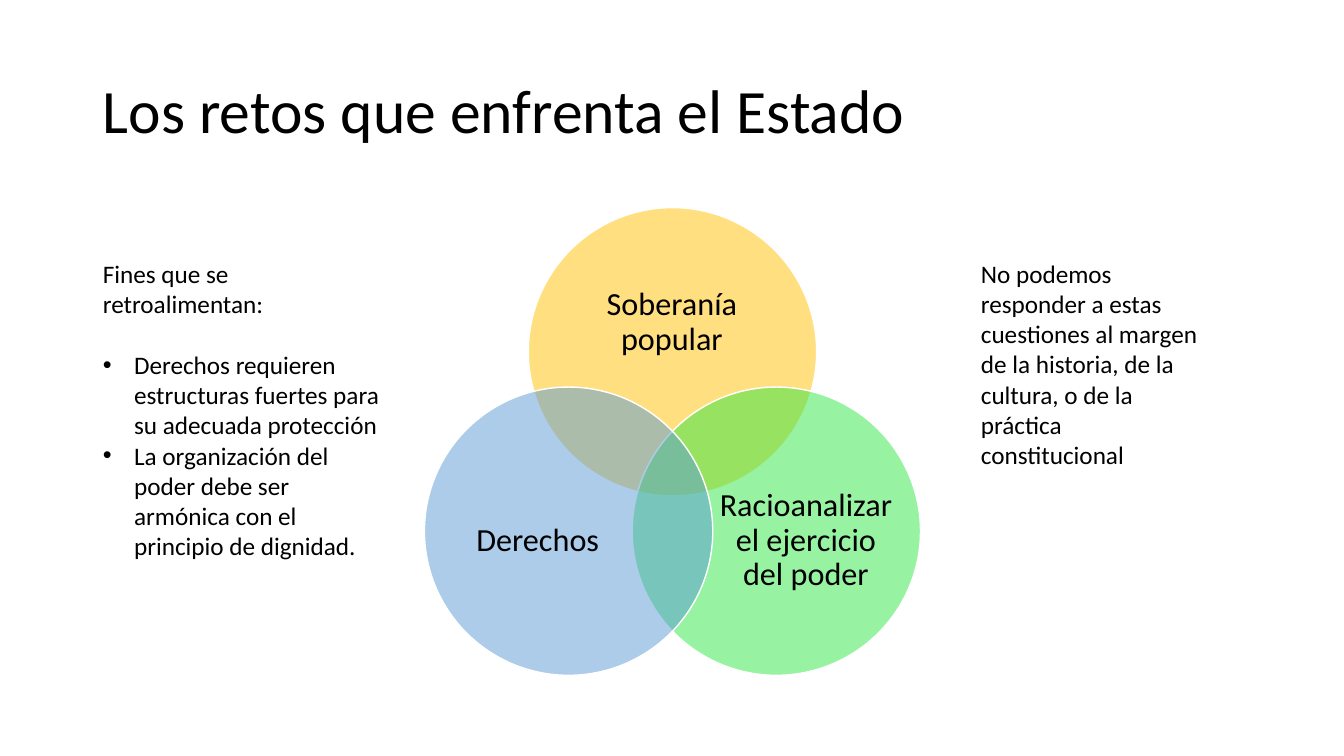
from dataclasses import dataclass
from math import cos, radians, sin

from lxml.etree import SubElement
from pptx import Presentation
from pptx.dml.color import RGBColor as Rgb
from pptx.enum.shapes import MSO_SHAPE as Kind
from pptx.enum.text import MSO_ANCHOR as Anchor, MSO_AUTO_SIZE as Fit, PP_ALIGN as Align
from pptx.oxml.ns import qn
from pptx.util import Pt

PX = 9144  # EMU in one px, at 100 px to the inch
FONT = "Calibri"
INK = {"text": "000000", "edge": "FFFFFF", "gold": "FFC000", "green": "30E845", "blue": "5B9BD5"}


@dataclass
class Box:
    left: int
    top: int
    width: int
    height: int

    def emu(self) -> tuple[int, ...]:
        return tuple(n * PX for n in (self.left, self.top, self.width, self.height))


@dataclass
class Ring:
    label: str
    hue: str
    angle: int
    box: Box


@dataclass
class Line:
    text: str
    bullet: bool = False
    before: int = 0


# Venn layout: circle centres sit evenly around one middle point
MID = (667, 468)
REACH = 119
RADIUS = 143
RINGS = [
    Ring("Soberanía popular", "gold", -90, Box(562, 256, 209, 128)),
    Ring("Racioanalizar el ejercicio del poder", "green", 30, Box(711, 458, 177, 157)),
    Ring("Derechos", "blue", 150, Box(448, 458, 171, 157)),
]
AIMS = [
    Line("Fines que se retroalimentan:"),
    Line("Derechos requieren estructuras fuertes para su adecuada protección", True, 22),
    Line("La organización del poder debe ser armónica con el principio de dignidad.", True),
]
NOTE = [
    Line("No podemos responder a estas cuestiones al margen de la historia, "
         "de la cultura, o de la práctica constitucional"),
]


def color(name: str) -> Rgb:
    return Rgb.from_string(INK[name])


def write(shape, lines: list[Line], *, size: int = 18, align=Align.LEFT,
          anchor=Anchor.TOP, space: float = 1.0, inset: bool = True) -> None:
    frame = shape.text_frame
    frame.word_wrap = True
    frame.auto_size = Fit.NONE
    frame.vertical_anchor = anchor
    if not inset:
        frame.margin_left = frame.margin_right = frame.margin_top = frame.margin_bottom = 0
    for i, line in enumerate(lines):
        para = frame.add_paragraph() if i else frame.paragraphs[0]
        mark(para, line.bullet)
        para.alignment = align
        para.line_spacing = space
        para.space_before = Pt(line.before)
        para.space_after = Pt(0)
        run = para.add_run()
        run.text = line.text
        run.font.name = FONT
        run.font.size = Pt(size)
        run.font.color.rgb = color("text")


def mark(para, bullet: bool) -> None:
    props = para._p.get_or_add_pPr()
    hang = 31 * PX if bullet else 0
    props.set("marL", str(hang))
    props.set("indent", str(-hang))
    if bullet:
        SubElement(props, qn("a:buFont"), typeface="Arial")
        SubElement(props, qn("a:buChar"), char="•")
    else:
        SubElement(props, qn("a:buNone"))


def place(shape, box: Box) -> None:
    shape.left, shape.top, shape.width, shape.height = box.emu()


def draw(shapes, ring: Ring) -> None:
    turn = radians(ring.angle)
    left = round(MID[0] + REACH * cos(turn) - RADIUS)
    top = round(MID[1] + REACH * sin(turn) - RADIUS)
    disc = shapes.add_shape(Kind.OVAL, *Box(left, top, 2 * RADIUS, 2 * RADIUS).emu())
    disc.shadow.inherit = False
    disc.fill.solid()
    disc.fill.fore_color.rgb = color(ring.hue)
    tint = disc.fill._xPr.find(qn("a:solidFill"))[0]
    SubElement(tint, qn("a:alpha"), val="50000")
    disc.line.color.rgb = color("edge")
    disc.line.width = Pt(1)
    label = shapes.add_textbox(*ring.box.emu())
    write(label, [Line(ring.label)], size=23, align=Align.CENTER,
          anchor=Anchor.MIDDLE, space=0.9, inset=False)


def main() -> None:
    deck = Presentation()
    deck.slide_width, deck.slide_height = 1333 * PX, 750 * PX
    slide = deck.slides.add_slide(deck.slide_layouts[1])

    # Title
    title = slide.shapes.title
    place(title, Box(92, 40, 1150, 145))
    write(title, [Line("Los retos que enfrenta el Estado")], size=44,
          anchor=Anchor.MIDDLE, space=0.9)

    # Venn diagram
    venn = slide.shapes.add_group_shape()
    for ring in RINGS:
        draw(venn.shapes, ring)

    # Side texts
    body = slide.placeholders[1]
    place(body, Box(92, 251, 294, 374))
    write(body, AIMS)
    write(slide.shapes.add_textbox(*Box(963, 251, 239, 222).emu()), NOTE)

    deck.save("out.pptx")


if __name__ == "__main__":
    main()
